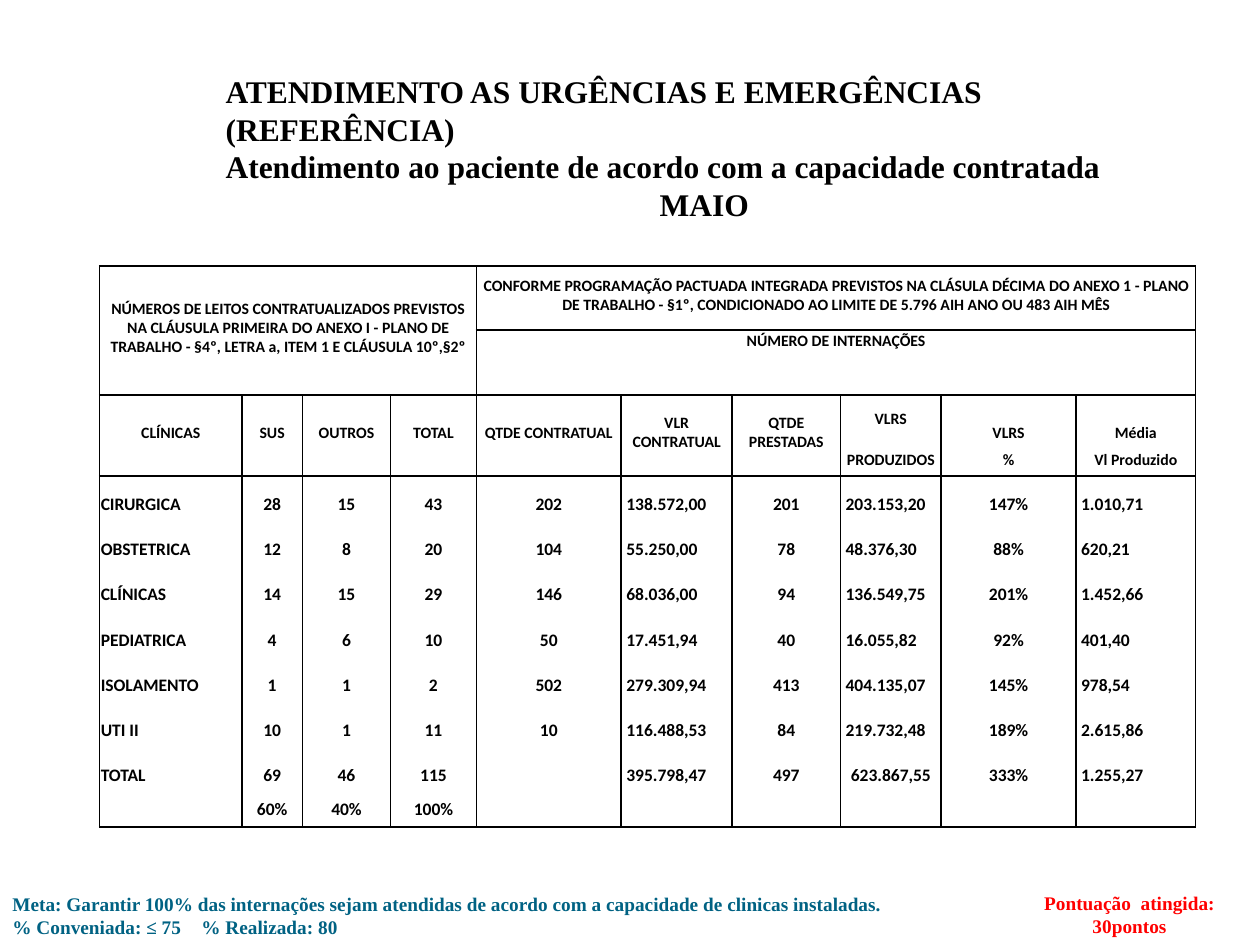
from lxml.etree import SubElement
from pptx import Presentation
from pptx.dml.color import RGBColor
from pptx.enum.shapes import MSO_SHAPE as Shape
from pptx.enum.text import MSO_ANCHOR as Anchor, MSO_AUTO_SIZE as AutoSize, PP_ALIGN as Align
from pptx.oxml.ns import qn
from pptx.util import Pt

BLACK = RGBColor(0x00, 0x00, 0x00)
WHITE = RGBColor(0xFF, 0xFF, 0xFF)
TEAL = RGBColor(0x00, 0x62, 0x83)
RED = RGBColor(0xFF, 0x00, 0x00)
SERIF = "Times New Roman"
SANS = "Calibri"

WIDTHS = [81.3, 34.6, 50.4, 49, 82.8, 63.4, 61.9, 57.6, 77, 68.4]
HEIGHTS = [36.7, 37, 31, 15.4] + [25.9] * 7 + [19.4]
FIRST_BODY_ROW = 4
LAST_ROW = len(HEIGHTS) - 1
LAST_COLUMN = len(WIDTHS) - 1
MONEY_COLUMNS = (5, 7, 9)

MERGED = [(0, 0, 1, 3), (0, 4, 0, 9), (1, 4, 1, 9)] + [(2, column, 3, column) for column in range(7)]
STACKED = [(2, column, 3, column) for column in range(7, 10)]
BODY = [(FIRST_BODY_ROW, column, LAST_ROW, column) for column in range(10)]

HEADERS = {
    (0, 0): "NÚMEROS DE LEITOS CONTRATUALIZADOS PREVISTOS NA CLÁUSULA PRIMEIRA DO ANEXO I - "
            "PLANO DE TRABALHO - §4º, LETRA a, ITEM 1 E CLÁUSULA 10º,§2º",
    (0, 4): "CONFORME PROGRAMAÇÃO PACTUADA INTEGRADA PREVISTOS NA CLÁSULA DÉCIMA DO ANEXO 1 - "
            "PLANO DE TRABALHO - §1º, CONDICIONADO AO LIMITE DE 5.796 AIH ANO OU 483 AIH MÊS",
    (1, 4): "NÚMERO DE INTERNAÇÕES",
}
LABELS = [
    ["CLÍNICAS", "SUS", "OUTROS", "TOTAL", "QTDE CONTRATUAL", "VLR CONTRATUAL", "QTDE PRESTADAS",
     "VLRS", "VLRS", "Média"],
    ["", "", "", "", "", "", "", "PRODUZIDOS", "%", "Vl Produzido"],
]
FIGURES = [
    ["CIRURGICA", "28", "15", "43", "202", "138.572,00", "201", "203.153,20", "147%", "1.010,71"],
    ["OBSTETRICA", "12", "8", "20", "104", "55.250,00", "78", "48.376,30", "88%", "620,21"],
    ["CLÍNICAS", "14", "15", "29", "146", "68.036,00", "94", "136.549,75", "201%", "1.452,66"],
    ["PEDIATRICA", "4", "6", "10", "50", "17.451,94", "40", "16.055,82", "92%", "401,40"],
    ["ISOLAMENTO", "1", "1", "2", "502", "279.309,94", "413", "404.135,07", "145%", "978,54"],
    ["UTI II", "10", "1", "11", "10", "116.488,53", "84", "219.732,48", "189%", "2.615,86"],
    ["TOTAL", "69", "46", "115", "", "395.798,47", "497", "623.867,55", "333%", "1.255,27"],
    ["", "60%", "40%", "100%", "", "", "", "", "", ""],
]


class SlideBuilder:
    def __init__(self, page):
        self.page = page

    def set_text(self, frame, lines, size, font, color):
        frame.text = "\n".join(text for text, _ in lines)
        for para, (text, align) in zip(frame.paragraphs, lines):
            para.alignment = align
            self.style(para, size, font, color)

    def style(self, para, size, font, color):
        para.font.size = Pt(size)
        para.font.name = font
        para.font.bold = True
        para.font.color.rgb = color

    def title(self, lines, left, top, width, height):
        box = self.page.shapes.title
        box.left, box.top, box.width, box.height = Pt(left), Pt(top), Pt(width), Pt(height)
        frame = box.text_frame
        frame.word_wrap = True
        frame.auto_size = AutoSize.SHAPE_TO_FIT_TEXT
        frame.vertical_anchor = Anchor.TOP
        self.set_text(frame, lines, 18, SERIF, BLACK)

    def note(self, text, align, color, left, top, width, height, tab=None):
        box = self.page.shapes.add_shape(Shape.RECTANGLE, Pt(left), Pt(top), Pt(width), Pt(height))
        box.shadow.inherit = False
        box.fill.solid()
        box.fill.fore_color.rgb = WHITE
        box.line.fill.background()
        frame = box.text_frame
        frame.word_wrap = True
        frame.auto_size = AutoSize.SHAPE_TO_FIT_TEXT
        frame.vertical_anchor = Anchor.TOP
        if tab:
            stops = SubElement(frame.paragraphs[0]._p.get_or_add_pPr(), qn("a:tabLst"))
            SubElement(stops, qn("a:tab"), pos=str(Pt(tab)), algn="l")
        self.set_text(frame, [(text, align)], 11, SERIF, color)

    def table(self, left, top):
        grid = self.page.shapes.add_table(
            len(HEIGHTS), len(WIDTHS), Pt(left), Pt(top), Pt(sum(WIDTHS)), Pt(sum(HEIGHTS))).table
        grid.first_row = grid.horz_banding = False
        for column, width in zip(grid.columns, WIDTHS):
            column.width = Pt(width)
        for row, height in zip(grid.rows, HEIGHTS):
            row.height = Pt(height)
        for first_row, first_column, last_row, last_column in MERGED:
            grid.cell(first_row, first_column).merge(grid.cell(last_row, last_column))
        for region in MERGED + STACKED + BODY:
            self.outline(grid, region, region in MERGED)
        texts = dict(HEADERS)
        for row, values in enumerate(LABELS + FIGURES, start=2):
            texts.update({(row, column): text for column, text in enumerate(values)})
        for row in range(LAST_ROW + 1):
            for column in range(LAST_COLUMN + 1):
                self.cell(grid.cell(row, column), row, column, texts.get((row, column), ""))

    def cell(self, cell, row, column, text):
        body = row >= FIRST_BODY_ROW
        centred_total = text == "623.867,55"
        money = body and column in MONEY_COLUMNS and not centred_total
        plain = money or (body and column == 0)
        cell.margin_left = Pt(3 if money else 0.72)
        cell.margin_right = cell.margin_top = Pt(0.72)
        cell.margin_bottom = Pt(3.6)
        low = body or (row in (2, 3) and column > 7)
        cell.vertical_anchor = Anchor.BOTTOM if low else Anchor.TOP if row == 1 else Anchor.MIDDLE
        cell.fill.background()
        size = 10 if body else 9
        self.set_text(cell.text_frame, [(text, Align.LEFT if plain else Align.CENTER)], size, SANS, BLACK)
        if not text:
            SubElement(cell.text_frame.paragraphs[0]._p, qn("a:endParaRPr"), sz=str(size * 100))

    def outline(self, grid, region, merged):
        first_row, first_column, last_row, last_column = region
        for row in range(first_row, last_row + 1):
            for column in range(first_column, last_column + 1):
                origin = merged and (row, column) == (first_row, first_column)
                edges = {
                    "a:lnL": column == first_column,
                    "a:lnR": column == last_column,
                    "a:lnT": row == first_row,
                    "a:lnB": row == last_row,
                }
                properties = grid.cell(row, column)._tc.get_or_add_tcPr()
                for tag, drawn in edges.items():
                    line = SubElement(properties, qn(tag), w=str(Pt(1)))
                    if drawn or origin:
                        fill = SubElement(line, qn("a:solidFill"))
                        SubElement(fill, qn("a:srgbClr"), val=str(BLACK))
                    else:
                        SubElement(line, qn("a:noFill"))


def main():
    deck = Presentation()
    deck.slide_width, deck.slide_height = Pt(720), Pt(540)
    builder = SlideBuilder(deck.slides.add_slide(deck.slide_layouts[5]))
    builder.title([
        ("ATENDIMENTO AS URGÊNCIAS E EMERGÊNCIAS (REFERÊNCIA)\v"
         "Atendimento ao paciente de acordo com a capacidade contratada", Align.LEFT),
        ("MAIO", Align.CENTER),
    ], 121.7, 37.4, 561.6, 94.3)
    builder.note(
        "Meta: Garantir 100% das internações sejam atendidas de acordo com a capacidade de clinicas "
        "instaladas.\v% Conveniada: ≤ 75\t% Realizada: 80",
        Align.LEFT, TEAL, 0, 506.2, 720, 33.8, tab=174)
    builder.note("Pontuação  atingida: 30pontos", Align.CENTER, RED, 570.2, 505.5, 150.5, 33.8)
    builder.table(56.9, 151.9)
    deck.save("out.pptx")


if __name__ == "__main__":
    main()
